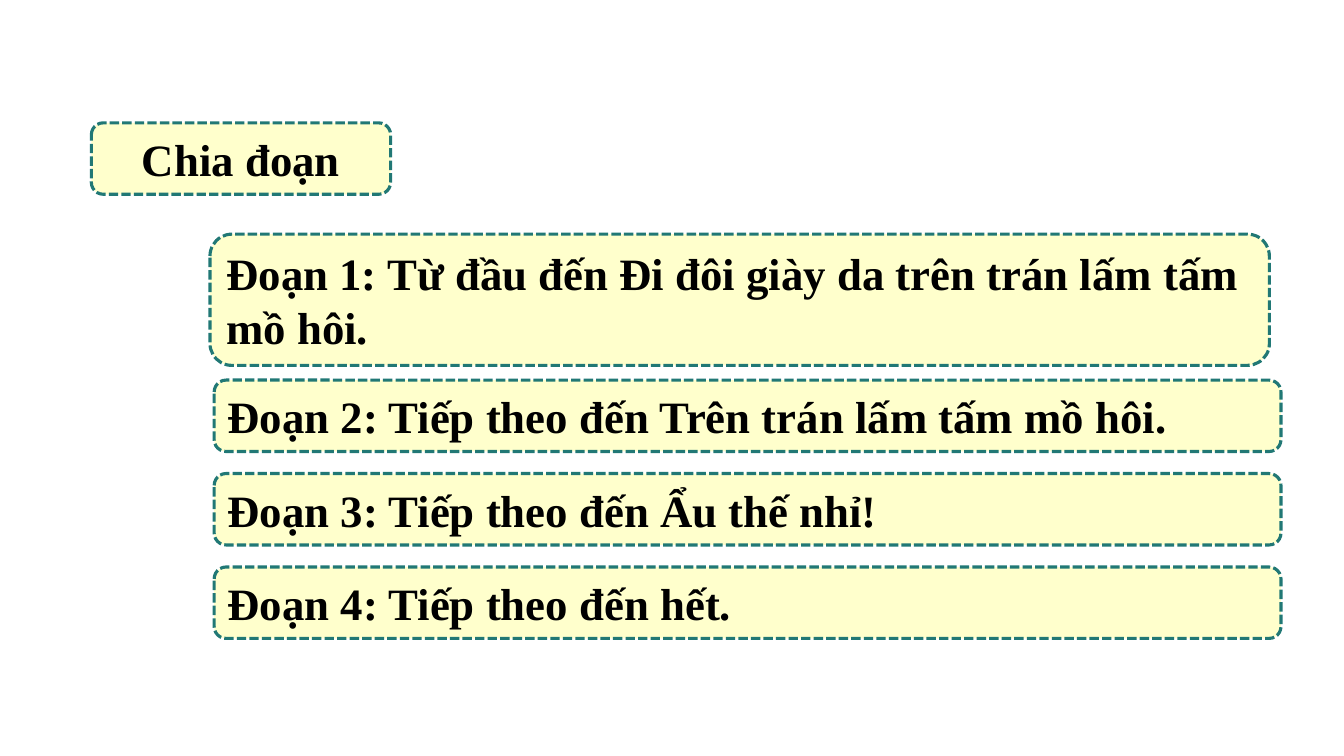
from pptx import Presentation
from pptx.dml.color import RGBColor
from pptx.enum.dml import MSO_LINE
from pptx.enum.shapes import MSO_SHAPE
from pptx.enum.text import MSO_ANCHOR, MSO_AUTO_SIZE, PP_ALIGN
from pptx.util import Emu, Pt

CREAM = RGBColor(0xFF, 0xFF, 0xCC)
TEAL = RGBColor(0x21, 0x78, 0x75)
BLACK = RGBColor(0x00, 0x00, 0x00)
EMU_PER_PX = 9525


class SectionSlide:
    """A slide of dashed cream panels with bold serif text."""

    font_name = "Times New Roman"
    font_size = Pt(32)

    def __init__(self, presentation):
        self.slide = presentation.slides.add_slide(presentation.slide_layouts[5])

    def px(self, *lengths):
        return [Emu(length * EMU_PER_PX) for length in lengths]

    def set_wording(self, shape, wording, align):
        frame = shape.text_frame
        frame.text = wording
        frame.word_wrap = True
        frame.auto_size = MSO_AUTO_SIZE.SHAPE_TO_FIT_TEXT
        frame.vertical_anchor = MSO_ANCHOR.MIDDLE
        frame.paragraphs[0].alignment = align
        font = frame.paragraphs[0].runs[0].font
        font.name, font.size, font.bold = self.font_name, self.font_size, True
        font.color.rgb = BLACK

    def panel(self, *box):
        panel = self.slide.shapes.add_shape(MSO_SHAPE.ROUNDED_RECTANGLE, *self.px(*box))
        panel.shadow.inherit = False
        panel.fill.solid()
        panel.fill.fore_color.rgb = CREAM
        panel.line.color.rgb = TEAL
        panel.line.width = Pt(2.25)
        panel.line.dash_style = MSO_LINE.SQUARE_DOT
        return panel

    def heading(self, wording, *box):
        backing = self.panel(*box)
        title = self.slide.shapes.title
        title.left, title.top, title.width, title.height = self.px(*box)
        self.set_wording(title, wording, PP_ALIGN.CENTER)
        backing._element.addnext(title._element)

    def passage(self, wording, *box):
        self.set_wording(self.panel(*box), wording, PP_ALIGN.LEFT)


def main():
    presentation = Presentation()
    presentation.slide_width = Emu(1280 * EMU_PER_PX)
    presentation.slide_height = Emu(720 * EMU_PER_PX)
    sections = SectionSlide(presentation)
    sections.heading("Chia đoạn", 87, 117, 285, 68)
    sections.passage(
        "Đoạn 1: Từ đầu đến Đi đôi giày da trên trán lấm tấm mồ hôi.",
        200, 223, 1009, 125,
    )
    short_passages = [
        "Đoạn 2: Tiếp theo đến Trên trán lấm tấm mồ hôi.",
        "Đoạn 3: Tiếp theo đến Ẩu thế nhỉ!",
        "Đoạn 4: Tiếp theo đến hết.",
    ]
    for row, wording in enumerate(short_passages):
        sections.passage(wording, 204, 362 + 89 * row, 1016, 68)
    presentation.save("out.pptx")


if __name__ == "__main__":
    main()
